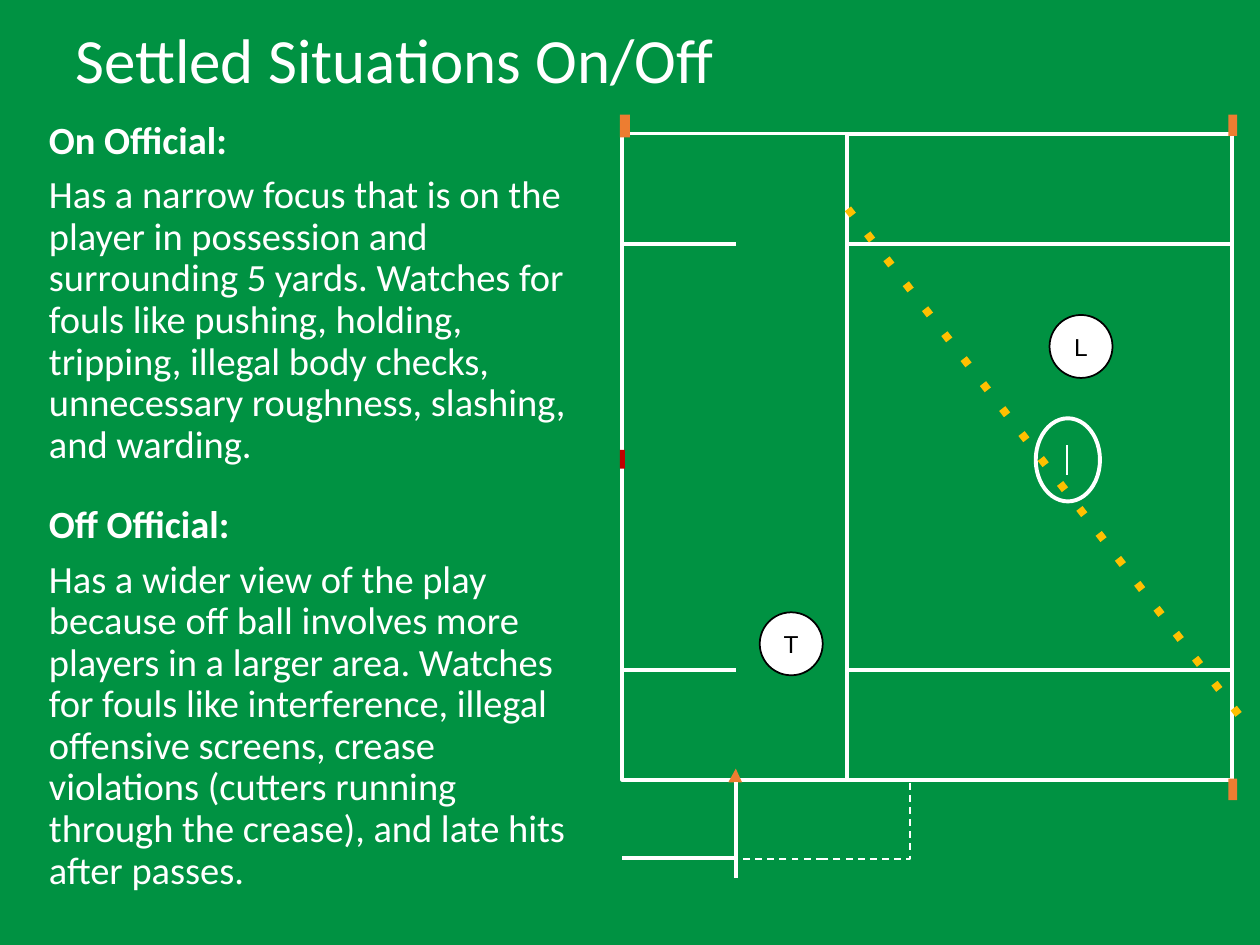
from pptx import Presentation
from pptx import util as u
from pptx.dml.color import RGBColor
from pptx.enum import shapes, text
from pptx.oxml.xmlchemy import OxmlElement

GREEN = RGBColor(0x00, 0x92, 0x42)
WHITE = RGBColor(0xFF, 0xFF, 0xFF)
BLACK = RGBColor(0x00, 0x00, 0x00)
ORANGE = RGBColor(0xED, 0x7D, 0x31)
RED = RGBColor(0xC0, 0x00, 0x00)
YELLOW = RGBColor(0xFF, 0xC0, 0x00)

deck = Presentation()
deck.slide_width, deck.slide_height = u.Inches(10), u.Inches(7.5)
page = deck.slides.add_slide(deck.slide_layouts[6])
page.background.fill.solid()
page.background.fill.fore_color.rgb = GREEN


def grid(*cells):
    """Turn counts of columns or rows into lengths: the slide is 100 columns by 75 rows."""
    return [round(cell * deck.slide_width / 100) for cell in cells]


def write(box, *lines, size=22, font="Calibri", color=WHITE, bold_first=False,
          align=text.PP_ALIGN.LEFT, anchor=text.MSO_ANCHOR.TOP, spacing=0.9):
    frame = box.text_frame
    frame.word_wrap = True
    frame.vertical_anchor = anchor
    for index, line in enumerate(lines):
        para = frame.paragraphs[0] if index == 0 else frame.add_paragraph()
        para.alignment = align
        para.line_spacing = spacing
        if index:
            para.space_before = u.Pt(7.5)
        span = para.add_run()
        span.text = line
        span.font.size = u.Pt(size)
        span.font.name = font
        span.font.bold = bold_first and index == 0
        span.font.color.rgb = color


# Columns and rows that the field markings share
sideline, wing, restraining, end_line = 49.4, 58.4, 67.2, 97.8
top, upper, lower, bottom = 10.6, 19.4, 53.2, 61.9
end_width = end_line - restraining

RECT, OVAL = shapes.MSO_SHAPE.RECTANGLE, shapes.MSO_SHAPE.OVAL
field_parts = [  # kind, place, fill, line colour, line width, label
    (RECT, (sideline, top, restraining - sideline, bottom - top), None, WHITE, 2.25, None),
    (RECT, (restraining, top, end_width, upper - top), None, WHITE, 2.25, None),
    (RECT, (restraining, lower, end_width, bottom - lower), None, WHITE, 2.25, None),
    (RECT, (restraining, upper, end_width, lower - upper), None, WHITE, 2.25, None),
    (RECT, (wing, 62, 13.8, 6.2), None, WHITE, 1, None),
    (OVAL, (82.2, 33.2, 5.1, 6.6), None, WHITE, 2.25, None),
    (RECT, (97.5, 9.1, 0.7, 1.7), ORANGE, None, 0, None),
    (RECT, (97.5, 61.8, 0.7, 1.7), ORANGE, None, 0, None),
    (RECT, (49.2, 9.1, 0.8, 1.8), ORANGE, None, 0, None),
    (RECT, (49.2, 35.7, 0.4, 1.5), RED, None, 0, None),
    (OVAL, (60.3, 48.6, 5, 5), WHITE, BLACK, 1, "T"),
    (OVAL, (83.3, 25, 5, 5), WHITE, BLACK, 1, "L"),
]
for kind, place, fill, color, width, label in field_parts:
    part = page.shapes.add_shape(kind, *grid(*place))
    part.shadow.inherit = False
    if fill is None:
        part.fill.background()
    else:
        part.fill.solid()
        part.fill.fore_color.rgb = fill
    if color is None:
        part.line.fill.background()
    else:
        part.line.color.rgb = color
        part.line.width = u.Pt(width)
    if width == 1 and label is None:
        part.line.dash_style = 4  # MSO_LINE.DASH
    if label:
        write(part, label, size=14, font="Arial", color=BLACK, spacing=1,
              align=text.PP_ALIGN.CENTER, anchor=text.MSO_ANCHOR.MIDDLE)

outline = page.shapes.build_freeform(*grid(wing, 61))
outline.add_line_segments([grid(wing - 0.6, 62.1), grid(wing + 0.5, 62.1)], close=True)
cone = outline.convert_to_shape()
cone.shadow.inherit = False
cone.fill.solid()
cone.fill.fore_color.rgb = ORANGE
cone.line.fill.background()

field_lines = [  # ends, colour, width, dash
    ((84.7, 37.7, 84.7, 35.3), WHITE, 1.5, None),
    ((wing, 69.7, wing, 62.1), WHITE, 2.25, None),
    *[((sideline, row, wing, row), WHITE, 2.25, None) for row in (upper, lower, 68.1)],
    ((98.3, 56.7, 66.7, 15.8), YELLOW, 4.5, "dot"),
]
for ends, color, width, dash in field_lines:
    line = page.shapes.add_connector(shapes.MSO_CONNECTOR.STRAIGHT, *grid(*ends))
    line.line.color.rgb = color
    line.line.width = u.Pt(width)
    if dash:
        dots = OxmlElement("a:prstDash")
        dots.set("val", dash)
        line.line._get_or_add_ln().append(dots)
    line._element.spPr.append(OxmlElement("a:effectLst"))

title = page.shapes.add_textbox(*grid(5, 2.5, 73.3, 5))
write(title, "Settled Situations On/Off", size=36, anchor=text.MSO_ANCHOR.MIDDLE)

duties = [
    (9.1, 28.9, "On Official:",
     "Has a narrow focus that is on the player in possession and surrounding 5 yards. "
     "Watches for fouls like pushing, holding, tripping, illegal body checks, "
     "unnecessary roughness, slashing, and warding."),
    (39.6, 31.7, "Off Official:",
     "Has a wider view of the play because off ball involves more players in a larger area. "
     "Watches for fouls like interference, illegal offensive screens, crease violations "
     "(cutters running through the crease), and late hits after passes."),
]
for row, height, heading, duty in duties:
    box = page.shapes.add_textbox(*grid(2.9, row, 44.2, height))
    write(box, heading, duty, bold_first=True)

deck.save("out.pptx")
